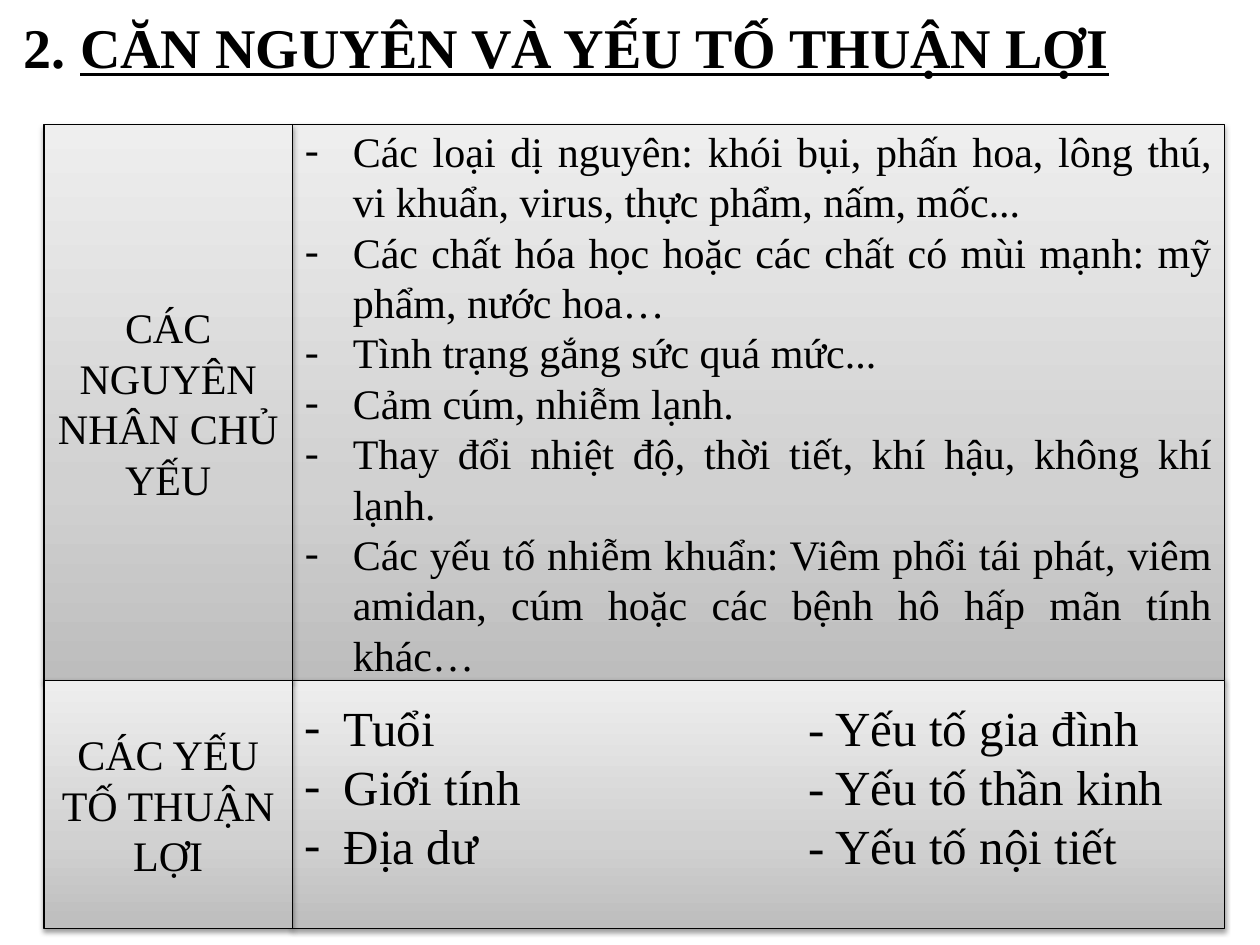
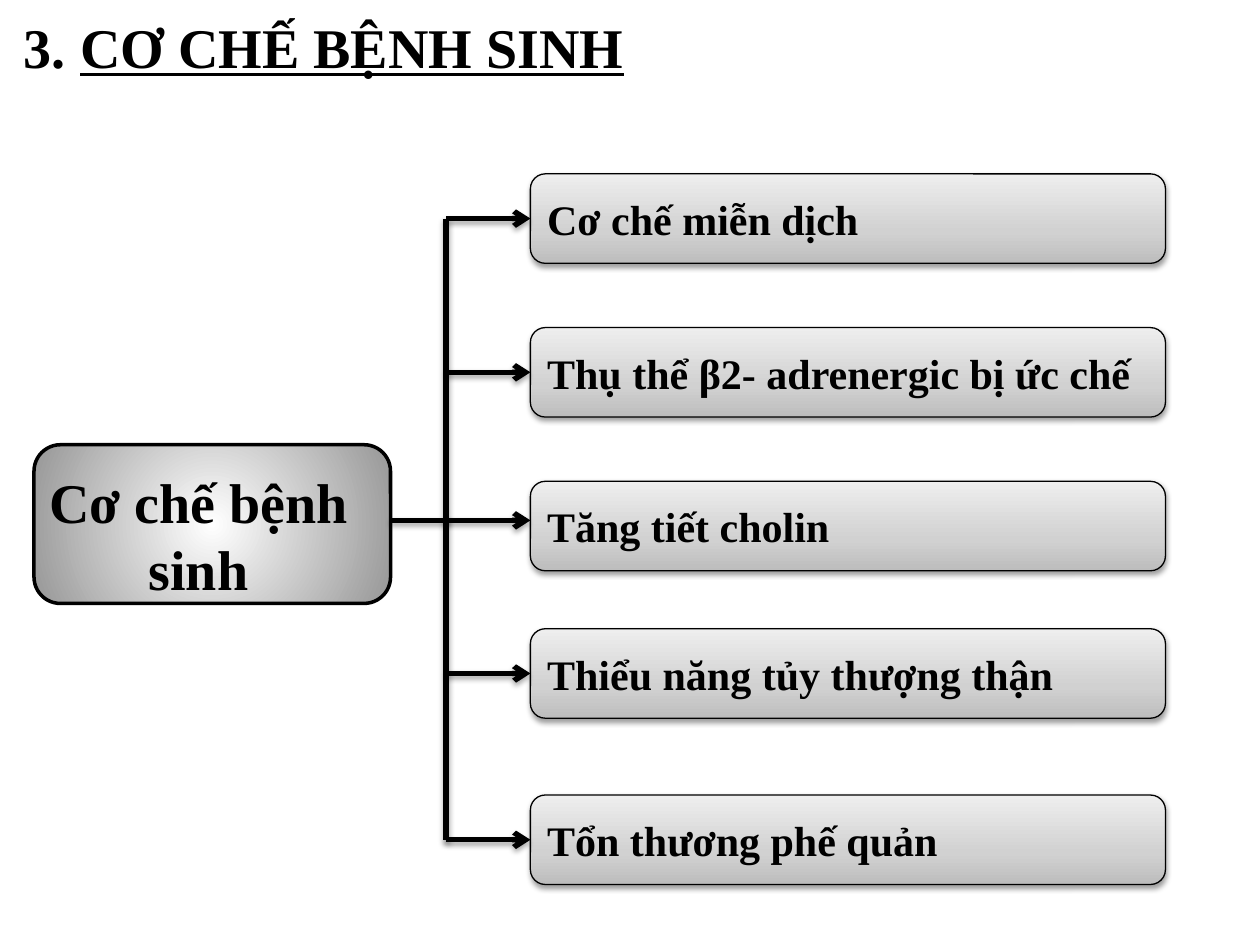
from lxml import etree
from pptx import Presentation
from pptx.dml.color import RGBColor
from pptx.enum.shapes import MSO_CONNECTOR, MSO_SHAPE
from pptx.enum.text import MSO_ANCHOR, MSO_AUTO_SIZE, PP_ALIGN
from pptx.oxml import parse_xml
from pptx.oxml.ns import nsdecls, qn
from pptx.util import Inches, Pt

FONT = "Times New Roman"
BLACK = RGBColor(0x00, 0x00, 0x00)
WHITE = RGBColor(0xFF, 0xFF, 0xFF)
GREY_DARK = RGBColor(0xBD, 0xBD, 0xBD)
GREY_MID = RGBColor(0xD1, 0xD1, 0xD1)
GREY_LIGHT = RGBColor(0xEE, 0xEE, 0xEE)
GREY_EDGE = RGBColor(0x97, 0x97, 0x97)

PANEL_STOPS = [(0, GREY_DARK), (35, GREY_MID), (100, GREY_LIGHT)]
HUB_STOPS = [(0, WHITE), (100, GREY_EDGE)]
UPWARD = '<a:lin ang="16200000" scaled="0"/>'
RADIAL = ('<a:path path="circle"><a:fillToRect l="50000" t="50000" '
          'r="50000" b="50000"/></a:path>')

RECT, ROUND = MSO_SHAPE.RECTANGLE, MSO_SHAPE.ROUNDED_RECTANGLE
STRAIGHT = MSO_CONNECTOR.STRAIGHT
LEFT, CENTER, JUSTIFY = PP_ALIGN.LEFT, PP_ALIGN.CENTER, PP_ALIGN.JUSTIFY
TOP, MIDDLE = MSO_ANCHOR.TOP, MSO_ANCHOR.MIDDLE
NO_FIT, GROW = MSO_AUTO_SIZE.NONE, MSO_AUTO_SIZE.SHAPE_TO_FIT_TEXT
TWO_CONTENT, TITLE_ONLY = 3, 5
LEFT_SIDE, RIGHT_SIDE = 1, 3
COLUMNS, ROWS = 100, 75

CAUSES = [
    "Các loại dị nguyên: khói bụi, phấn hoa, lông thú, vi khuẩn, virus, "
    "thực phẩm, nấm, mốc...",
    "Các chất hóa học hoặc các chất có mùi mạnh: mỹ phẩm, nước hoa…",
    "Tình trạng gắng sức quá mức...",
    "Cảm cúm, nhiễm lạnh.",
    "Thay đổi nhiệt độ, thời tiết, khí hậu, không khí lạnh.",
    "Các yếu tố nhiễm khuẩn: Viêm phổi tái phát, viêm amidan, cúm hoặc "
    "các bệnh hô hấp mãn tính khác…",
]
FACTORS = [
    "Tuổi\t\t\t- Yếu tố gia đình",
    "Giới tính\t\t\t- Yếu tố thần kinh",
    "Địa dư\t\t\t- Yếu tố nội tiết",
]
MECHANISMS = [
    ("Cơ chế miễn dịch", 13.8),
    ("Thụ thể β2- adrenergic bị ức chế", 26),
    ("Tăng tiết cholin", 38.2),
    ("Thiểu năng tủy thượng thận", 49.9),
    ("Tổn thương phế quản", 63.1),
]


class Deck:
    """Holds the shared style and the current slide; lengths are grid units."""

    def __init__(self):
        self.prs = Presentation()
        self.prs.slide_width, self.prs.slide_height = Inches(10), Inches(7.5)
        self.slide = None

    def grid(self, x, y):
        return (round(self.prs.slide_width * x / COLUMNS),
                round(self.prs.slide_height * y / ROWS))

    def place(self, sp, x, y, w, h):
        sp.left, sp.top = self.grid(x, y)
        sp.width, sp.height = self.grid(w, h)

    def new_slide(self, layout, number, title):
        self.slide = self.prs.slides.add_slide(self.prs.slide_layouts[layout])
        sp = self.slide.shapes.title
        self.place(sp, 0.9, 0.5, 88.9 if layout == TWO_CONTENT else 50, 6.4)
        tf = sp.text_frame
        tf.text = number
        tf.paragraphs[0].add_run().text = title
        self.format_text(tf, 32, bold=True)
        tf.paragraphs[0].runs[1].font.underline = True
        tf.vertical_anchor, tf.word_wrap, tf.auto_size = TOP, False, GROW

    def format_text(self, tf, size, bold=False, align=LEFT):
        for p in tf.paragraphs:
            p.alignment = align
            for r in p.runs:
                r.font.name, r.font.size = FONT, Pt(size)
                r.font.bold, r.font.color.rgb = bold, BLACK

    def gradient(self, sp, stops, direction):
        gs = "".join(f'<a:gs pos="{pos * 1000}"><a:srgbClr val="{rgb}"/></a:gs>'
                     for pos, rgb in stops)
        sp._element.spPr.append(parse_xml(
            f'<a:gradFill {nsdecls("a")} rotWithShape="1">'
            f'<a:gsLst>{gs}</a:gsLst>{direction}</a:gradFill>'))

    def outline(self, sp, width):
        sp.line.color.rgb, sp.line.width = BLACK, Pt(width)

    def shadow(self, sp, alpha, distance):
        """Soft shadow below; add it after the fill and the line."""
        sp._element.spPr.append(parse_xml(
            f'<a:effectLst {nsdecls("a")}><a:outerShdw blurRad="40000" '
            f'dist="{Pt(distance)}" dir="5400000" rotWithShape="0">'
            f'<a:srgbClr val="{BLACK}"><a:alpha val="{alpha * 1000}"/>'
            '</a:srgbClr></a:outerShdw></a:effectLst>'))

    def panel_style(self, sp):
        self.gradient(sp, PANEL_STOPS, UPWARD)
        self.outline(sp, 0.75)
        self.shadow(sp, 38, 1.6)
        tf = sp.text_frame
        tf.vertical_anchor, tf.word_wrap, tf.auto_size = MIDDLE, True, NO_FIT

    def panel(self, kind, text, x, y, w, h, bold=False, align=LEFT):
        sp = self.slide.shapes.add_shape(kind, *self.grid(x, y), *self.grid(w, h))
        self.panel_style(sp)
        sp.text_frame.text = text
        self.format_text(sp.text_frame, 24, bold, align)
        return sp

    def list_panel(self, idx, items, x, y, w, h, size, indent, align, level=0):
        sp = self.slide.placeholders[idx]
        self.place(sp, x, y, w, h)
        self.panel_style(sp)
        tf = sp.text_frame
        tf.text = "\n".join(items)
        for p in tf.paragraphs:
            p.level = level
            p.space_before = Pt(0)
            pPr = p._p.get_or_add_pPr()
            pPr.set("marL", str(Inches(indent)))
            pPr.set("indent", str(-Inches(indent)))
            pPr.set("defTabSz", str(Inches(1)))
            etree.SubElement(pPr, qn("a:buFont")).set("typeface", FONT)
            etree.SubElement(pPr, qn("a:buChar")).set("char", "-")
        self.format_text(tf, size, align=align)
        return sp

    def hub(self, text, x, y, w, h):
        sp = self.slide.shapes.add_shape(ROUND, *self.grid(x, y), *self.grid(w, h))
        self.gradient(sp, HUB_STOPS, RADIAL)
        self.outline(sp, 2)
        sp.shadow.inherit = False
        label = self.slide.shapes.add_textbox(
            *self.grid(x + 0.1, y + 1.3), *self.grid(25.9, 11.8))
        tf = label.text_frame
        tf.text, tf.word_wrap = text, True
        self.format_text(tf, 32, bold=True, align=CENTER)

    def line(self, x1, y1, x2, y2, arrow=False):
        cx = self.slide.shapes.add_connector(
            STRAIGHT, *self.grid(x1, y1), *self.grid(x2, y2))
        self.outline(cx, 3)
        if arrow:
            ln = cx._element.spPr.find(qn("a:ln"))
            etree.SubElement(ln, qn("a:tailEnd")).set("type", "arrow")
        self.shadow(cx, 35, 1.8)
        return cx


def causes_slide(deck):
    deck.new_slide(TWO_CONTENT, "2. ", "CĂN NGUYÊN VÀ YẾU TỐ THUẬN LỢI")
    label_x, label_w, list_w = 3.5, 19.7, 74
    list_x = label_x + label_w
    top, causes_h, factors_h = 9.9, 44.1, 19.7
    factors_y = top + causes_h
    deck.panel(RECT, "CÁC NGUYÊN NHÂN CHỦ YẾU", label_x, top, label_w, causes_h,
               align=CENTER)
    deck.list_panel(1, CAUSES, list_x, top, list_w, causes_h,
                    24, 0.38, JUSTIFY, level=1)
    deck.panel(RECT, "CÁC YẾU TỐ THUẬN LỢI", label_x, factors_y, label_w,
               factors_h, align=CENTER)
    factors = deck.list_panel(2, FACTORS, list_x, factors_y, list_w, factors_h,
                              28, 0.31, LEFT)
    factors.text_frame.margin_bottom = Inches(0.34)


def mechanisms_slide(deck):
    deck.new_slide(TITLE_ONLY, "3. ", "CƠ CHẾ BỆNH SINH")
    hub_y, hub_row = 41.3, 2
    trunk_x, box_x, box_w, box_h = 35.4, 42.1, 50.4, 7.1
    deck.hub("Cơ chế bệnh sinh", 2.7, 35.3, 28.3, 12.6)
    deck.line(31, hub_y, 35.7, hub_y)
    first, last = (MECHANISMS[i][1] + box_h / 2 for i in (0, -1))
    deck.line(trunk_x, last, trunk_x, first)
    for row, (text, y) in enumerate(MECHANISMS):
        box = deck.panel(ROUND, text, box_x, y, box_w, box_h, bold=True)
        arrow_y = hub_y if row == hub_row else y + box_h / 2
        arrow = deck.line(trunk_x, arrow_y, box_x, arrow_y, arrow=True)
        if row != hub_row:
            arrow.end_connect(box, LEFT_SIDE)


def main():
    deck = Deck()
    causes_slide(deck)
    mechanisms_slide(deck)
    deck.prs.save("out.pptx")


if __name__ == "__main__":
    main()
